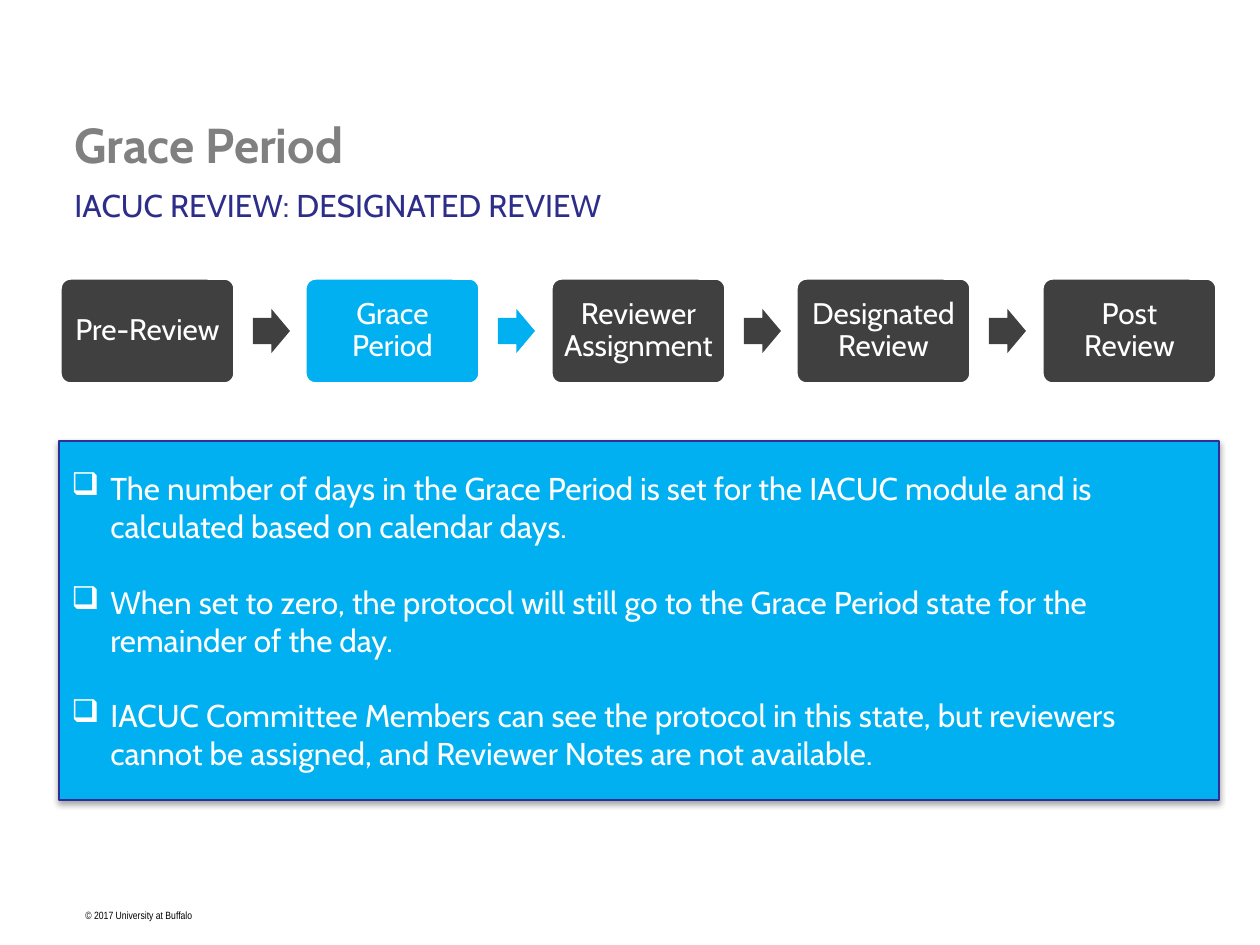
from dataclasses import dataclass

from lxml import etree
from pptx import Presentation
from pptx.dml.color import RGBColor
from pptx.enum.shapes import MSO_SHAPE
from pptx.enum.text import MSO_ANCHOR, MSO_AUTO_SIZE, PP_ALIGN
from pptx.oxml.ns import qn
from pptx.util import Emu, Pt

ROUNDED, ARROW, RECT = (MSO_SHAPE.ROUNDED_RECTANGLE, MSO_SHAPE.RIGHT_ARROW,
                        MSO_SHAPE.RECTANGLE)
TOP, MIDDLE = MSO_ANCHOR.TOP, MSO_ANCHOR.MIDDLE
LEFT, CENTER = PP_ALIGN.LEFT, PP_ALIGN.CENTER
NO_FIT = MSO_AUTO_SIZE.NONE

WHITE = RGBColor(0xFF, 0xFF, 0xFF)
BLACK = RGBColor(0x00, 0x00, 0x00)
GRAY = RGBColor(0x80, 0x80, 0x80)
DARK = RGBColor(0x40, 0x40, 0x40)
SKY = RGBColor(0x00, 0xB0, 0xF0)
NAVY = RGBColor(0x2D, 0x2D, 0x8A)
BORDER = RGBColor(0x2F, 0x2F, 0x98)

PX_PER_INCH = 126
FONT = "Cabin"


@dataclass(frozen=True)
class Box:
    x: int
    y: int
    w: int
    h: int


@dataclass(frozen=True)
class Step:
    label: str
    color: RGBColor = DARK


STEPS = [Step("Pre-Review"), Step("Grace Period", SKY), Step("Reviewer Assignment"),
         Step("Designated Review"), Step("Post Review")]
FIRST_X, LAST_X = 60, 1042

NOTES = [
    "The number of days in the Grace Period is set for the IACUC module and is "
    "calculated based on calendar days.",
    "When set to zero, the protocol will still go to the Grace Period state for the "
    "remainder of the day.",
    "IACUC Committee Members can see the protocol in this state, but reviewers "
    "cannot be assigned, and Reviewer Notes are not available.",
]


def px(n: int) -> Emu:
    return Emu(round(n * 914400 / PX_PER_INCH))


def place(box: Box) -> tuple:
    return px(box.x), px(box.y), px(box.w), px(box.h)


def set_attrs(obj, values: dict) -> None:
    for name, value in values.items():
        setattr(obj, name, value)


def write(p, text: str, size: float, color: RGBColor, name: str = FONT,
          bold: bool = False, **para) -> None:
    set_attrs(p, para)
    r = p.add_run()
    r.text = text
    set_attrs(r.font, {"size": Pt(size), "name": name, "bold": bold})
    r.font.color.rgb = color


def add_label(s, box: Box, text: str, size: float, color: RGBColor,
              name: str = FONT, wrap: bool = True) -> None:
    tf = s.shapes.add_textbox(*place(box)).text_frame
    tf.word_wrap = wrap
    write(tf.paragraphs[0], text, size, color, name)


def add_block(s, kind, box: Box, fill: RGBColor, adjust: tuple = (),
              line: RGBColor | None = None, width: float = 0):
    sp = s.shapes.add_shape(kind, *place(box))
    sp.shadow.inherit = False
    sp.fill.solid()
    sp.fill.fore_color.rgb = fill
    if line is None:
        sp.line.fill.background()
    else:
        sp.line.color.rgb = line
        sp.line.width = Pt(width)
    for i, value in enumerate(adjust):
        sp.adjustments[i] = value
    return sp


def add_step(s, x: int, step: Step) -> None:
    sp = add_block(s, ROUNDED, Box(x, 278, 175, 106), step.color, (0.1,), WHITE, 2)
    tf = sp.text_frame
    sides = ("left", "right", "top", "bottom")
    set_attrs(tf, {f"margin_{side}": px(9) for side in sides})
    set_attrs(tf, {"word_wrap": True, "vertical_anchor": MIDDLE})
    write(tf.paragraphs[0], step.label, 17, WHITE, alignment=CENTER, line_spacing=0.9)


def add_drop_shadow(sp) -> None:
    effects = sp._element.spPr.find(qn("a:effectLst"))
    shadow = etree.SubElement(effects, qn("a:outerShdw"), blurRad="40000",
                              dist="23000", dir="5400000", rotWithShape="0")
    color = etree.SubElement(shadow, qn("a:srgbClr"), val="000000")
    etree.SubElement(color, qn("a:alpha"), val="35000")


def add_bullet(p, char: str, indent: int) -> None:
    pPr = p._p.get_or_add_pPr()
    pPr.set("marL", str(px(indent)))
    pPr.set("indent", str(-px(indent)))
    etree.SubElement(pPr, qn("a:buChar"), char=char)


def add_notes(s, box: Box) -> None:
    sp = add_block(s, RECT, box, SKY, line=BORDER, width=0.75)
    add_drop_shadow(sp)
    tf = sp.text_frame
    set_attrs(tf, {"word_wrap": True, "vertical_anchor": MIDDLE})
    for i, note in enumerate(NOTES):
        p = tf.add_paragraph() if i else tf.paragraphs[0]
        add_bullet(p, "❑", 39)
        write(p, note, 18, WHITE, alignment=LEFT, space_before=Pt(21.6 if i else 0))


def main() -> None:
    prs = Presentation()
    prs.slide_width, prs.slide_height = px(1260), px(945)
    s = prs.slides.add_slide(prs.slide_layouts[5])

    # Title and subtitle
    title = s.shapes.title
    title.left, title.top, title.width, title.height = place(Box(62, 108, 888, 71))
    tf = title.text_frame
    set_attrs(tf, {"word_wrap": True, "vertical_anchor": TOP, "auto_size": NO_FIT})
    write(tf.paragraphs[0], "Grace Period", 28, GRAY, bold=True, alignment=LEFT)
    add_label(s, Box(62, 180, 887, 63), "IACUC REVIEW: DESIGNATED REVIEW", 18, NAVY)

    # Process steps, each but the last followed by an arrow
    last = len(STEPS) - 1
    for i, step in enumerate(STEPS):
        x = FIRST_X + (LAST_X - FIRST_X) * i // last
        add_step(s, x, step)
        if i < last:
            add_block(s, ARROW, Box(x + 193, 309, 37, 44), step.color, (0.6, 0.5))

    # Notes panel
    add_notes(s, Box(59, 441, 1160, 359))

    # Footer
    add_label(s, Box(73, 903, 134, 25), "© 2017 University at Buffalo", 6, BLACK,
              "Arial Narrow", wrap=False)

    prs.save("out.pptx")


if __name__ == "__main__":
    main()
